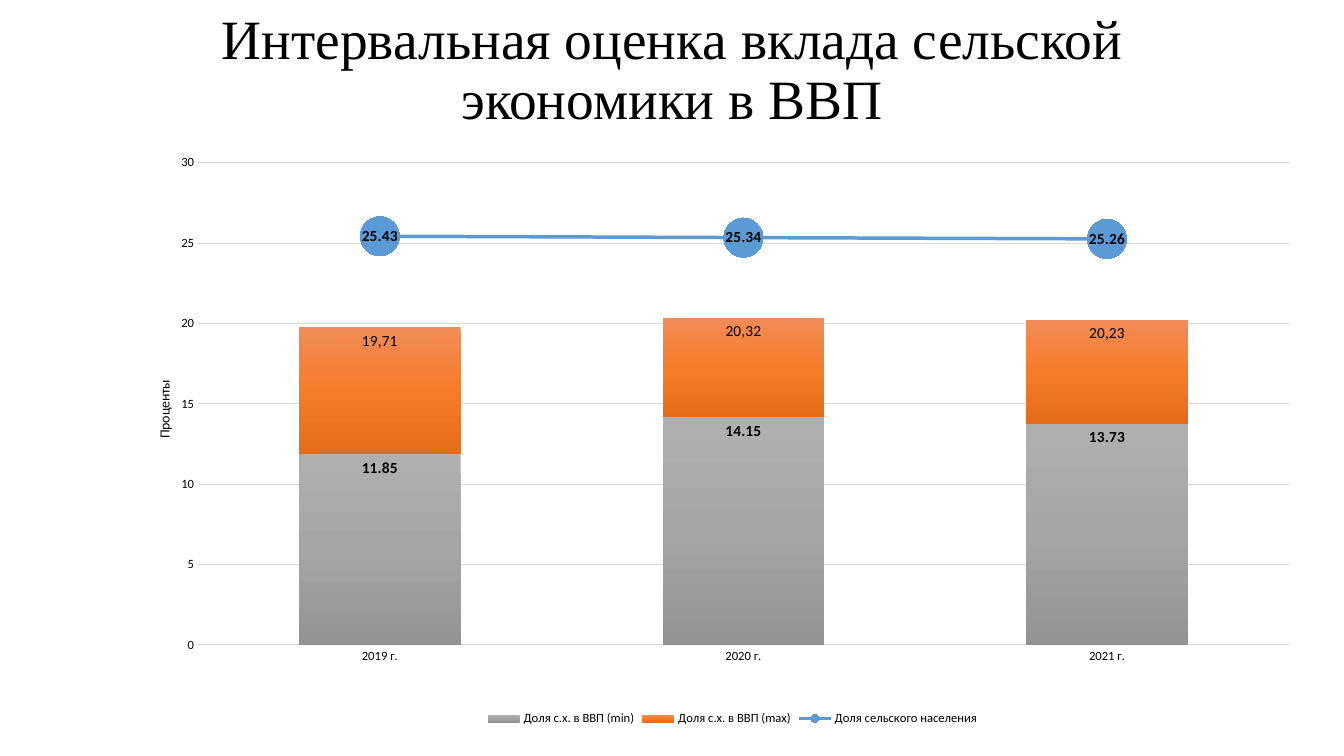
"""Build a slide with a combined chart of the rural share of GDP and population."""
import copy

import pptx
import pptx.chart.data
import pptx.dml.color
import pptx.enum.chart
import pptx.enum.text
import pptx.oxml
import pptx.oxml.ns
import pptx.util

BLACK = pptx.dml.color.RGBColor(0x00, 0x00, 0x00)
GRID_GREY = pptx.dml.color.RGBColor(0xD9, 0xD9, 0xD9)
BLUE = pptx.dml.color.RGBColor(0x5B, 0x9B, 0xD5)
GREYS = [pptx.dml.color.RGBColor.from_string(tone) for tone in ("AFAFAF", "A5A5A5", "939393")]
ORANGES = [pptx.dml.color.RGBColor.from_string(tone) for tone in ("F18C57", "F67B28", "E56C19")]
CELL = pptx.util.Inches(1) / 12
COLUMNS, ROWS = 160, 90
POSITION = pptx.enum.chart.XL_LABEL_POSITION
qn = pptx.oxml.ns.qn


def style_font(font, size, bold=False, name="Calibri"):
    font.name = name
    font.size = pptx.util.Pt(size)
    font.bold = bold
    font.color.rgb = BLACK


def cells(*counts):
    return [round(count * CELL) for count in counts]


deck = pptx.Presentation()
deck.slide_width, deck.slide_height = cells(COLUMNS, ROWS)
slide = deck.slides.add_slide(deck.slide_layouts[5])

title = slide.shapes.title
title.left, title.top, title.width, title.height = cells(11, 3.1, 138, 10.8)
frame = title.text_frame
frame.word_wrap = True
frame.auto_size = pptx.enum.text.MSO_AUTO_SIZE.NONE
frame.vertical_anchor = pptx.enum.text.MSO_ANCHOR.MIDDLE
para = frame.paragraphs[0]
para.alignment = pptx.enum.text.PP_ALIGN.CENTER
para.line_spacing = 0.9
span = para.add_run()
span.text = "Интервальная оценка вклада сельской экономики в ВВП"
style_font(span.font, 39.6, name="Times New Roman")

data = pptx.chart.data.CategoryChartData()
data.categories = ["2019 г.", "2020 г.", "2021 г."]
data.add_series("Доля с.х. в ВВП (min)", (11.85, 14.15, 13.73))
data.add_series("Доля с.х. в ВВП (max)", (7.9, 6.2, 6.5))
data.add_series("Доля сельского населения", (25.43, 25.34, 25.26))
chart = slide.shapes.add_chart(
    pptx.enum.chart.XL_CHART_TYPE.COLUMN_STACKED, *cells(18.2, 18, 138, 68.9), data
).chart
style_font(chart.font, 10)
chart.has_title = False
chart.has_legend = True
chart.legend.position = pptx.enum.chart.XL_LEGEND_POSITION.BOTTOM
chart.legend.include_in_layout = False
style_font(chart.legend.font, 9)

years, percents = chart.category_axis, chart.value_axis
for axis in (years, percents):
    axis.major_tick_mark = axis.minor_tick_mark = pptx.enum.chart.XL_TICK_MARK.NONE
    style_font(axis.tick_labels.font, 9)
percents.minimum_scale, percents.maximum_scale, percents.major_unit = 0, 30, 5
percents.tick_labels.number_format = "0"
percents.tick_labels.number_format_is_linked = False
percents.format.line.fill.background()
percents.has_major_gridlines = True
for line in (years.format.line, percents.major_gridlines.format.line):
    line.color.rgb = GRID_GREY
    line.width = pptx.util.Pt(0.75)
span = percents.axis_title.text_frame.paragraphs[0].add_run()
span.text = "Проценты"
style_font(span.font, 10)

bars = chart.plots[0]
bars.gap_width, bars.overlap, bars.vary_by_categories = 125, 100, False

bar_chart = chart._chartSpace.find(".//" + qn("c:barChart"))
line_chart = pptx.oxml.parse_xml(
    f'<c:lineChart {pptx.oxml.ns.nsdecls("c")}><c:grouping val="standard"/>'
    '<c:varyColors val="0"/><c:marker val="1"/></c:lineChart>'
)
population = bar_chart.findall(qn("c:ser"))[2]
for bar_setting in population.findall(qn("c:invertIfNegative")):
    population.remove(bar_setting)
line_chart.insert(2, population)
for axis_id in bar_chart.findall(qn("c:axId")):
    line_chart.append(copy.deepcopy(axis_id))
bar_chart.addnext(line_chart)

plot_area = bar_chart.getparent()
for layout in plot_area.findall(qn("c:layout")):
    plot_area.remove(layout)
shares = {"x": 0.039, "y": 0.02, "w": 0.941, "h": 0.833}
plot_area.insert(0, pptx.oxml.parse_xml(
    f'<c:layout {pptx.oxml.ns.nsdecls("c")}><c:manualLayout><c:layoutTarget val="inner"/>'
    '<c:xMode val="edge"/><c:yMode val="edge"/>'
    + "".join(f'<c:{side} val="{share}"/>' for side, share in shares.items())
    + "</c:manualLayout></c:layout>"
))

lowest, highest = bars.series
for series, tones in ((lowest, GREYS), (highest, ORANGES)):
    fill = series.format.fill
    fill.gradient()
    fill.gradient_angle = 270
    stop_list = series._element.find(".//" + qn("a:gsLst"))
    stop_list.append(copy.deepcopy(stop_list[-1]))
    for index, (stop, tone) in enumerate(zip(fill.gradient_stops, tones)):
        stop.position = index / 2
        stop.color.rgb = tone

for point_index, caption in enumerate(("19,71", "20,32", "20,23")):
    label = highest.points[point_index].data_label
    span = label.text_frame.paragraphs[0].add_run()
    span.text = caption
    style_font(span.font, 11)
    label.position = POSITION.INSIDE_END

residents = chart.plots[1].series[0]
residents.smooth = False
residents.format.line.color.rgb = BLUE
residents.format.line.width = pptx.util.Pt(2.5)
residents.marker.style = pptx.enum.chart.XL_MARKER_STYLE.CIRCLE
residents.marker.size = 28
residents.marker.format.fill.solid()
residents.marker.format.fill.fore_color.rgb = BLUE
residents.marker.format.line.color.rgb = BLUE

for series, position, pattern in (
    (lowest, POSITION.INSIDE_END, "0.00"),
    (residents, POSITION.CENTER, "#,##0.00"),
):
    labels = series.data_labels
    labels.show_value = True
    labels.position = position
    labels.number_format = pattern
    labels.number_format_is_linked = False
    style_font(labels.font, 11, bold=True)

deck.save("out.pptx")
